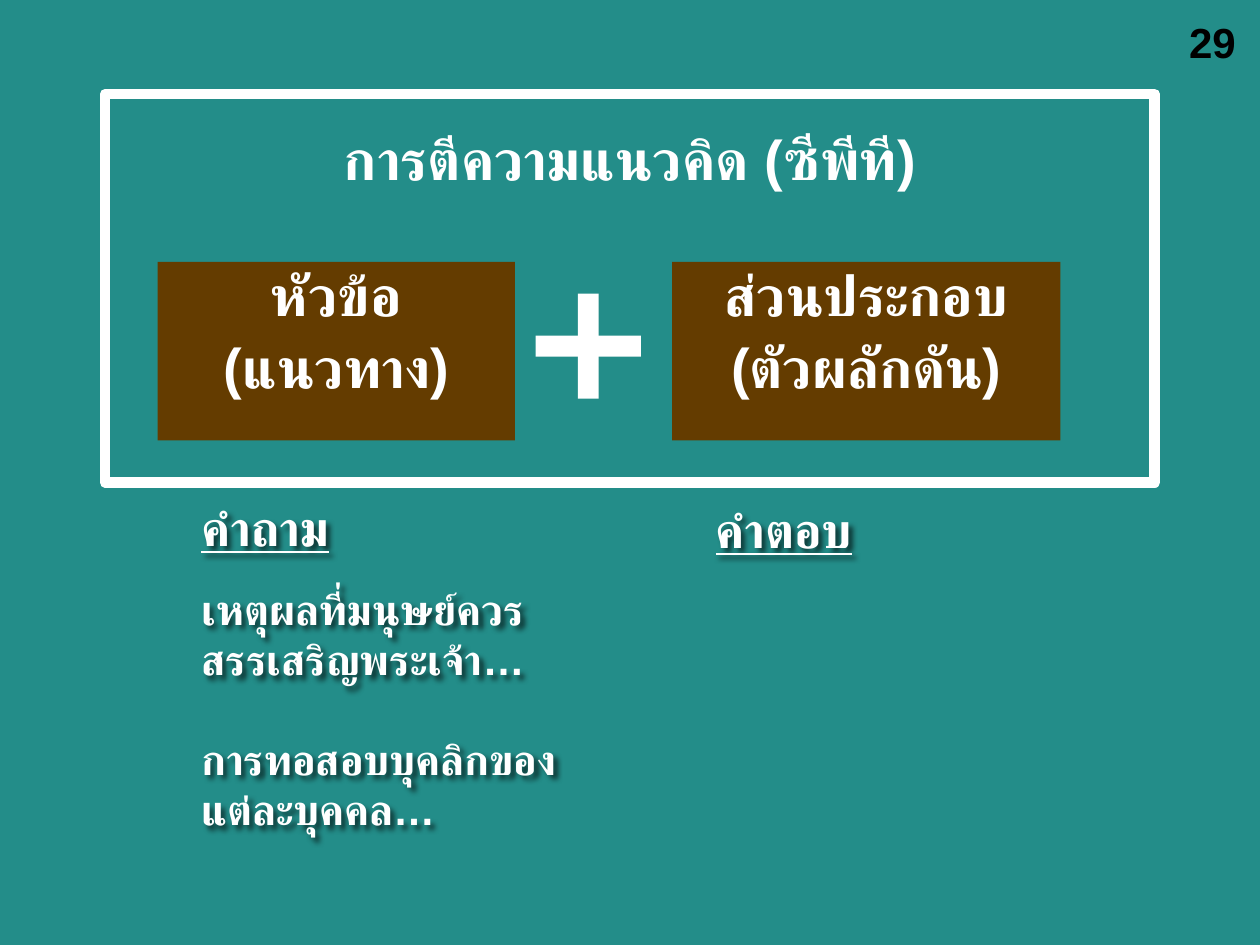
import lxml.etree
import pptx
import pptx.dml.color
import pptx.enum.lang
import pptx.enum.shapes
import pptx.enum.text
import pptx.oxml
import pptx.oxml.ns
import pptx.util

Cm = pptx.util.Cm
Pt = pptx.util.Pt
RECT = pptx.enum.shapes.MSO_SHAPE.RECTANGLE
CENTER = pptx.enum.text.PP_ALIGN.CENTER
MIDDLE = pptx.enum.text.MSO_ANCHOR.MIDDLE
TOP = pptx.enum.text.MSO_ANCHOR.TOP
TEAL, BROWN, WHITE, BLACK = "238D89", "643C00", "FFFFFF", "000000"
SHADOW = (
    '<a:effectLst %s><a:outerShdw blurRad="38100" dist="38100" dir="2700000">'
    '<a:srgbClr val="000000"><a:alpha val="60000"/></a:srgbClr>'
    "</a:outerShdw></a:effectLst>" % pptx.oxml.ns.nsdecls("a")
)


def rgb(value):
    return pptx.dml.color.RGBColor.from_string(value)


def write(sp, lines, size, color=WHITE, centered=False, underline=False,
          wrap=True, anchor=TOP):
    tf = sp.text_frame
    tf.word_wrap = wrap
    tf.vertical_anchor = anchor
    for i, line in enumerate(lines):
        p = tf.add_paragraph() if i else tf.paragraphs[0]
        if centered:
            p.alignment = CENTER
            p.line_spacing = 0.9
            p.space_before = Pt(size * 0.2)
        r = p.add_run()
        r.text = line
        r.font.size = Pt(size)
        r.font.bold = True
        if underline:
            r.font.underline = True
        r.font.name = "Arial"
        r.font.language_id = pptx.enum.lang.MSO_LANGUAGE_ID.THAI
        r.font.color.rgb = rgb(color)
        cs = lxml.etree.SubElement(r.font._element, pptx.oxml.ns.qn("a:cs"))
        cs.set("typeface", "Arial")


def add_rect(s, x, y, w, h, fill=None):
    sp = s.shapes.add_shape(RECT, Cm(x), Cm(y), Cm(w), Cm(h))
    sp.shadow.inherit = False
    if fill:
        sp.fill.solid()
        sp.fill.fore_color.rgb = rgb(fill)
    else:
        sp.fill.background()
    sp.line.fill.background()
    return sp


def add_text(s, x, y, w, h, lines, size, shadow=False, **style):
    sp = s.shapes.add_textbox(Cm(x), Cm(y), Cm(w), Cm(h))
    write(sp, lines, size, **style)
    if shadow:
        sp._element.spPr.append(pptx.oxml.parse_xml(SHADOW))


def add_plus(s, x, y, size):
    thick = size / 5
    offset = (size - thick) / 2
    add_rect(s, x + offset, y, thick, size, WHITE)
    add_rect(s, x, y + offset, size, thick, WHITE)


def add_formula(s, x, y, w, h):
    add_text(s, x, y, w, 2.75, ["การตีความแนวคิด (ซีพีที)"], 32,
             centered=True, anchor=MIDDLE)
    parts = [
        (1.06, 7.2, ["หัวข้อ", "(แนวทาง)"]),
        (11.43, 7.83, ["ส่วนประกอบ", "(ตัวผลักดัน)"]),
    ]
    for dx, width, lines in parts:
        sp = add_rect(s, x + dx, y + 3.38, width, 3.6, BROWN)
        write(sp, lines, 32, centered=True)
    add_plus(s, x + 8.68, y + 4.02, 2.12)
    frame = add_rect(s, x, y, w, h)
    frame.line.color.rgb = rgb(WHITE)
    frame.line.width = Pt(6)


def add_questions(s, x, y, w):
    add_text(s, x, y, 3.48, 1.45, ["คำถาม"], 28, shadow=True,
             underline=True, wrap=False)
    questions = ["เหตุผลที่มนุษย์ควรสรรเสริญพระเจ้า…", "การทอสอบบุคลิกของแต่ละบุคคล…"]
    for i, question in enumerate(questions):
        add_text(s, x, y + 1.73 + 3.02 * i, w, 2.31, [question], 24, shadow=True)


def add_answers(s, x, y):
    add_text(s, x, y, 3.5, 1.45, ["คำตอบ"], 28, shadow=True,
             underline=True, wrap=False)


def add_number(s, x, y):
    add_text(s, x, y, 1.45, 1.27, ["29"], 24, color=BLACK, wrap=False)


def main():
    prs = pptx.Presentation()
    prs.slide_width, prs.slide_height = Cm(25.4), Cm(19.05)
    s = prs.slides.add_slide(prs.slide_layouts[6])
    s.background.fill.solid()
    s.background.fill.fore_color.rgb = rgb(TEAL)
    add_formula(s, 2.12, 1.9, 21.16, 7.83)
    add_questions(s, 3.81, 9.91, 9.32)
    add_answers(s, 14.18, 9.95)
    add_number(s, 23.72, 0.2)
    prs.save("out.pptx")


if __name__ == "__main__":
    main()
